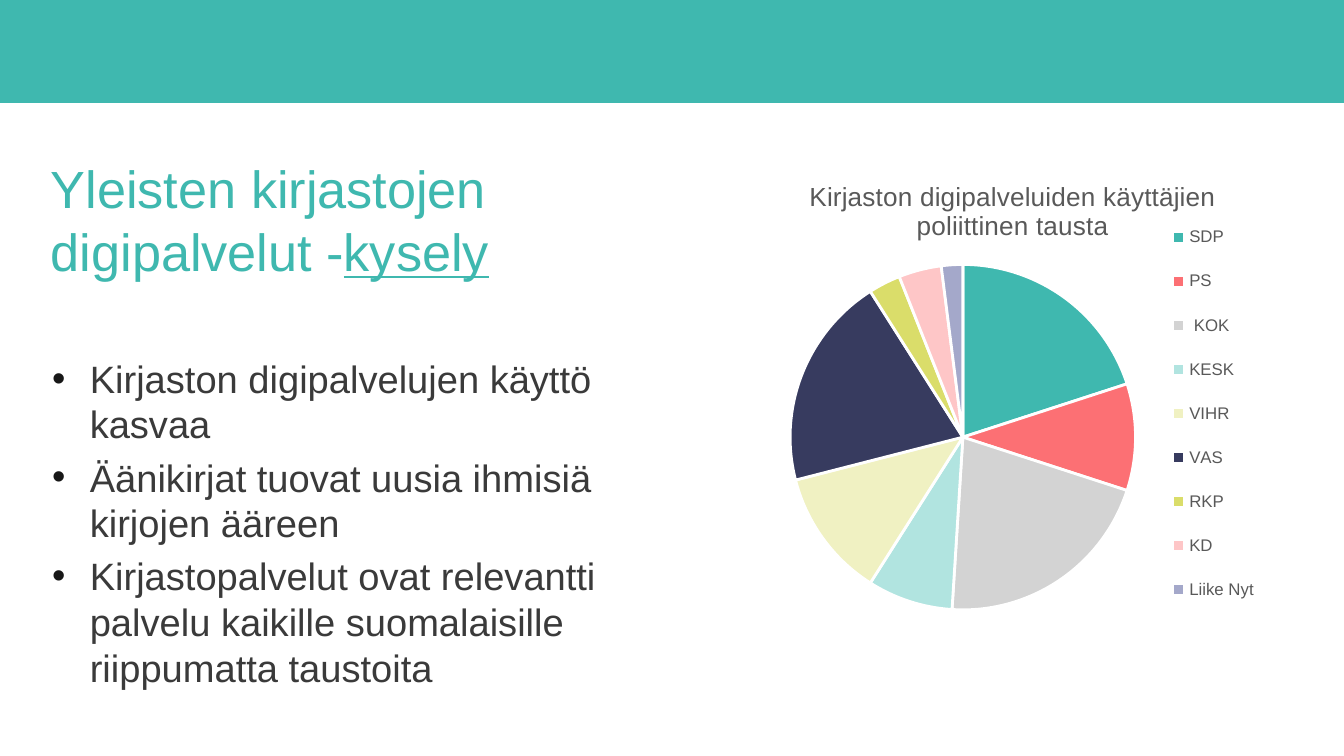
import lxml.etree
import pptx
import pptx.chart.data
import pptx.dml.color
import pptx.enum.chart
import pptx.enum.shapes
import pptx.enum.text
import pptx.oxml.ns
import pptx.util

WIDTH = 10
HEIGHT = WIDTH * 9 / 16
FONT = "Arial"
TEAL, BODY, BULLET, GREY, WHITE = "3FB8AF", "3A3A3A", "171717", "595959", "FFFFFF"
TITLE = [("Yleisten kirjastojen digipalvelut -", {}), ("kysely", {"underline": True})]
POINTS = [
    "Kirjaston digipalvelujen käyttö kasvaa",
    "Äänikirjat tuovat uusia ihmisiä kirjojen ääreen",
    "Kirjastopalvelut ovat relevantti palvelu kaikille suomalaisille riippumatta taustoita",
]
CHART_TITLE = "Kirjaston digipalveluiden käyttäjien poliittinen tausta"
PARTIES = [
    ("SDP", 20, TEAL),
    ("PS", 10, "FC7074"),
    (" KOK", 21, "D3D3D3"),
    ("KESK", 8, "B1E4E0"),
    ("VIHR", 12, "F0F1C2"),
    ("VAS", 20, "373B5F"),
    ("RKP", 3, "DADD6A"),
    ("KD", 4, "FEC6C7"),
    ("Liike Nyt", 2, "A4A8CA"),
]


def rgb(value):
    return pptx.dml.color.RGBColor.from_string(value)


def box(left, top, width, height):
    shares = zip((left, top, width, height), (WIDTH, HEIGHT) * 2)
    return [pptx.util.Inches(share * side / 100) for share, side in shares]


def set_all(obj, values):
    for name, value in values.items():
        setattr(obj, name, value)


def set_font(font, size, color, **more):
    set_all(font, {"name": FONT, "size": pptx.util.Pt(size), **more})
    font.color.rgb = rgb(color)


def sub(parent, tag, **attributes):
    return lxml.etree.SubElement(parent, pptx.oxml.ns.qn(tag), **attributes)


def add_band(s, area, color):
    sp = s.shapes.add_shape(pptx.enum.shapes.MSO_SHAPE.RECTANGLE, *box(*area))
    sp.shadow.inherit = False
    sp.fill.solid()
    sp.fill.fore_color.rgb = rgb(color)
    sp.line.fill.background()


def add_text(s, area, paragraphs, size, color, anchor, bullets=False):
    tf = s.shapes.add_textbox(*box(*area)).text_frame
    set_all(tf, {"word_wrap": True, "vertical_anchor": anchor})
    for i, runs in enumerate(paragraphs):
        p = tf.add_paragraph() if i else tf.paragraphs[0]
        if i:
            p.space_before = pptx.util.Pt(4)
        if bullets:
            add_bullet(p)
        for text, more in runs:
            r = p.add_run()
            r.text = text
            set_font(r.font, size, color, **more)


def add_bullet(p):
    pPr = p._p.get_or_add_pPr()
    indent = pptx.util.Inches(0.28)
    pPr.set("marL", str(indent))
    pPr.set("indent", str(-indent))
    sub(sub(pPr, "a:buClr"), "a:srgbClr", val=BULLET)
    sub(pPr, "a:buFont", typeface=FONT)
    sub(pPr, "a:buChar", char="•")


def place(part, index, **shares):
    for old in part.findall(pptx.oxml.ns.qn("c:layout")):
        part.remove(old)
    layout = sub(part, "c:layout")
    part.insert(index, layout)
    manual = sub(layout, "c:manualLayout")
    if index == 0:
        sub(manual, "c:layoutTarget", val="inner")
    for side in "xy":
        sub(manual, f"c:{side}Mode", val="edge")
    for side, share in shares.items():
        sub(manual, f"c:{side}", val=str(share))


def add_pie(s, area):
    names, values, colors = zip(*PARTIES)
    data = pptx.chart.data.CategoryChartData()
    data.categories = names
    data.add_series("Series 1", values)
    kind = pptx.enum.chart.XL_CHART_TYPE.PIE
    chart = s.shapes.add_chart(kind, *box(*area), data).chart
    set_font(chart.font, 10, "000000")

    chart.has_title = True
    p = chart.chart_title.text_frame.paragraphs[0]
    r = p.add_run()
    r.text = CHART_TITLE
    set_font(r.font, 14, GREY, bold=False)

    chart.has_legend = True
    right = pptx.enum.chart.XL_LEGEND_POSITION.RIGHT
    set_all(chart.legend, {"position": right, "include_in_layout": False})
    set_font(chart.legend.font, 9, GREY)

    plot = chart.plots[0]
    plot.vary_by_categories = True
    for i, color in enumerate(colors):
        fmt = plot.series[0].points[i].format
        fmt.fill.solid()
        fmt.fill.fore_color.rgb = rgb(color)
        fmt.line.color.rgb = rgb(WHITE)
        fmt.line.width = pptx.util.Pt(1.5)

    place(chart.chart_title._element, 1, x=0.12, y=0.04)
    place(chart.legend._element, 1, x=0.77, y=0.1, w=0.2, h=0.89)
    place(chart._chartSpace.chart.plotArea, 0, x=0.09, y=0.23, w=0.64, h=0.73)


def main():
    prs = pptx.Presentation()
    prs.slide_width = pptx.util.Inches(WIDTH)
    prs.slide_height = pptx.util.Inches(HEIGHT)
    s = prs.slides.add_slide(prs.slide_layouts[6])
    anchors = pptx.enum.text.MSO_ANCHOR
    add_band(s, (0, 0, 100, 13.6), TEAL)
    add_text(s, (2.8, 19.2, 42.8, 19.6), [TITLE], 28, TEAL, anchors.MIDDLE)
    points = [[(text, {})] for text in POINTS]
    add_text(s, (2.9, 46.1, 42.7, 38.8), points, 20.4, BODY, anchors.TOP, bullets=True)
    add_pie(s, (55, 20.6, 40.6, 62.6))
    prs.save("out.pptx")


if __name__ == "__main__":
    main()
